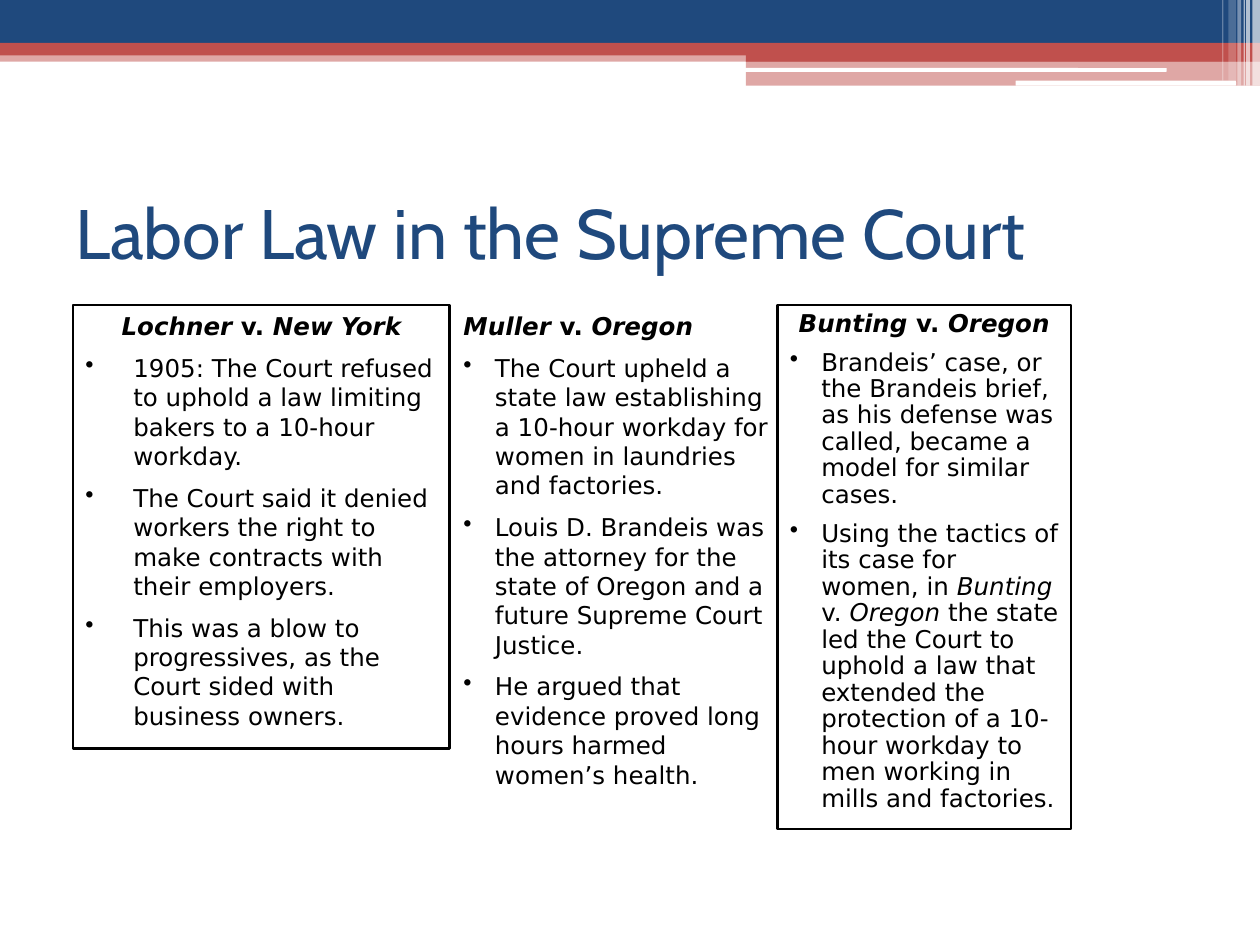
from lxml import etree
from pptx import Presentation
from pptx.dml.color import RGBColor
from pptx.enum import shapes, text
from pptx.oxml import ns
from pptx.util import Inches, Pt

COLORS = {"navy": "1F497D", "red": "C0504D", "white": "FFFFFF", "black": "000000"}
RECT = shapes.MSO_SHAPE.RECTANGLE
ROUNDED = shapes.MSO_SHAPE.ROUNDED_RECTANGLE

# left, top, width, height, color, opacity in percent
BANDS = [
    (0, 0.4, 10, 0.09, "red", 50),
    (0, 0, 10, 0.34, "navy", 100),
    (0, 0.34, 10, 0.1, "red", 100),
    (5.92, 0.39, 4.08, 0.1, "red", 100),
    (5.92, 0.48, 4.08, 0.2, "red", 50),
]
HIGHLIGHTS = [(5.91, 0.54, 3.35, 0.03), (8.06, 0.64, 1.75, 0.04)]
# left, width, height, opacity in percent
STRIPES = [
    (9.94, 0.06, 0.68, 65),
    (9.89, 0.03, 0.68, 65),
    (9.87, 0.01, 0.68, 60),
    (9.82, 0.03, 0.68, 40),
    (9.75, 0.06, 0.64, 20),
    (9.7, 0.01, 0.64, 30),
]

# Underscores switch italics on and off
LOCHNER = ("_Lochner _v._ New York_", [
    "1905: The Court refused to uphold a law limiting bakers to a 10-hour workday.",
    "The Court said it denied workers the right to make contracts with their employers.",
    "This was a blow to progressives, as the Court sided with business owners.",
])
MULLER = ("_Muller _v._ Oregon_", [
    "The Court upheld a state law establishing a 10-hour workday for women in "
    "laundries and factories.",
    "Louis D. Brandeis was the attorney for the state of Oregon and a future "
    "Supreme Court Justice.",
    "He argued that evidence proved long hours harmed women’s health.",
])
BUNTING = ("_Bunting _v._ Oregon_", [
    "Brandeis’ case, or the Brandeis brief, as his defense was called, became a "
    "model for similar cases.",
    "Using the tactics of its case for women, in _Bunting_ v. _Oregon_ the state led "
    "the Court to uphold a law that extended the protection of a 10-hour workday to "
    "men working in mills and factories.",
])


def rgb(name):
    return RGBColor.from_string(COLORS[name])


def add_block(page, left, top, width, height, color, opacity=100, kind=RECT):
    block = page.shapes.add_shape(
        kind, Inches(left), Inches(top), Inches(width), Inches(height))
    block.shadow.inherit = False
    block.line.fill.background()
    block.fill.solid()
    block.fill.fore_color.rgb = rgb(color)
    if opacity < 100:
        fill_color = block.fill._xPr.find(".//" + ns.qn("a:srgbClr"))
        etree.SubElement(fill_color, ns.qn("a:alpha"), val=str(opacity * 1000))
    return block


def add_text_box(page, left, top, width, height):
    box = page.shapes.add_textbox(
        Inches(left), Inches(top), Inches(width), Inches(height))
    box.text_frame.word_wrap = True
    return box


def add_framed_box(page, left, top, width, height):
    box = add_block(page, left, top, width, height, "white")
    box.line.color.rgb = rgb("black")
    box.line.width = Pt(1.5)
    box.text_frame.word_wrap = True
    box.text_frame.vertical_anchor = text.MSO_ANCHOR.TOP
    box.text_frame.auto_size = text.MSO_AUTO_SIZE.SHAPE_TO_FIT_TEXT
    return box


def add_span(para, words, font, size, color, bold=False, italic=False):
    span = para.add_run()
    span.text = words
    span.font.name = font
    span.font.size = Pt(size)
    span.font.color.rgb = rgb(color)
    span.font.bold = bold
    span.font.italic = italic


def set_hanging_indent(para, indent):
    props = para._p.get_or_add_pPr()
    props.set("marL", str(Inches(indent)))
    props.set("indent", str(-Inches(indent)))
    return props


def fill_case(box, case, indent, heading_align, line_spacing=None):
    """Write a bold heading and its bulleted points."""
    heading, points = case
    frame = box.text_frame
    for index, words in enumerate([heading, *points]):
        is_heading = index == 0
        para = frame.paragraphs[0] if is_heading else frame.add_paragraph()
        props = set_hanging_indent(para, indent)
        para.alignment = heading_align if is_heading else text.PP_ALIGN.LEFT
        if line_spacing:
            para.line_spacing = line_spacing
        if not is_heading:
            para.space_before = Pt(7)
            etree.SubElement(props, ns.qn("a:buChar"), char="•")
        for part, piece in enumerate(words.split("_")):
            if piece:
                add_span(para, piece, "DejaVu Sans", 14, "black",
                         bold=is_heading, italic=part % 2 == 1)


def add_banner(page):
    for band in BANDS:
        add_block(page, *band)
    for highlight in HIGHLIGHTS:
        add_block(page, *highlight, "white", kind=ROUNDED)
    for left, width, height, opacity in STRIPES:
        add_block(page, left, 0, width, height, "white", opacity)


def add_title(page, words):
    box = add_text_box(page, 0.5, 1.25, 9, 1.17)
    box.text_frame.vertical_anchor = text.MSO_ANCHOR.MIDDLE
    add_span(box.text_frame.paragraphs[0], words, "Cabin", 40, "navy")


def main():
    deck = Presentation()
    deck.slide_width, deck.slide_height = Inches(10), Inches(7.5)
    page = deck.slides.add_slide(deck.slide_layouts[6])
    add_banner(page)
    add_title(page, "Labor Law in the Supreme Court")

    top = 2.42
    center, left = text.PP_ALIGN.CENTER, text.PP_ALIGN.LEFT
    fill_case(add_framed_box(page, 0.58, top, 2.99, 3.52), LOCHNER, 0.38, center)
    fill_case(add_text_box(page, 3.58, top, 2.65, 5.23), MULLER, 0.25, left)
    fill_case(add_framed_box(page, 6.17, top, 2.33, 4.16), BUNTING, 0.25, center, 0.9)
    deck.save("out.pptx")


if __name__ == "__main__":
    main()
